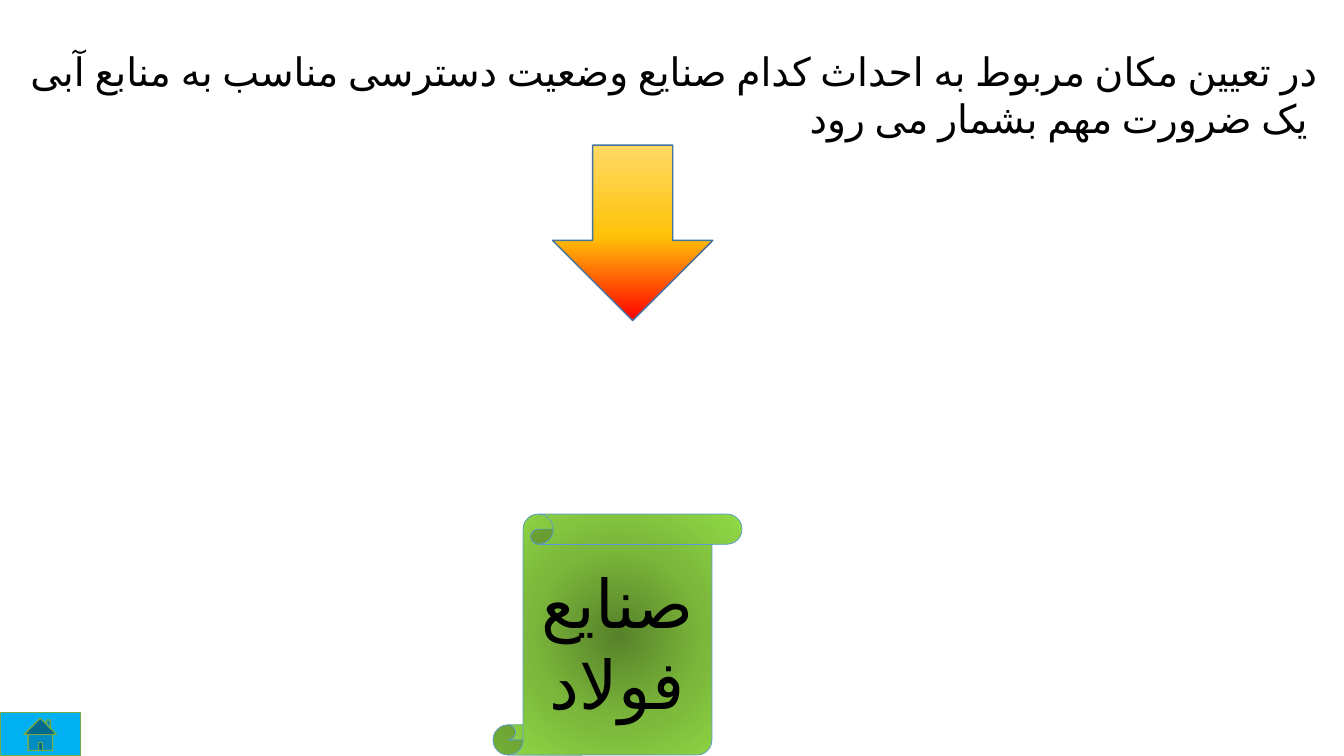
from lxml import etree
from pptx import Presentation
from pptx.dml.color import RGBColor
from pptx.enum import lang, shapes, text
from pptx.oxml import ns
from pptx.util import Inches, Pt

FONT = "Calibri"
SCRIPT_FONT = "+mn-cs"
TITLE = {
    "words": "در تعیین مکان مربوط به احداث کدام صنایع وضعیت دسترسی مناسب به منابع آبی یک ضرورت مهم بشمار می رود ",
    "box": (0.11, 0.42, 13.06, 1.04),
    "size": 28,
    "align": text.PP_ALIGN.RIGHT,
    "frame": {"word_wrap": True, "auto_size": text.MSO_AUTO_SIZE.NONE,
              "vertical_anchor": text.MSO_ANCHOR.TOP},
}
ANSWER = {
    "words": "صنایع فولاد",
    "size": 48,
    "align": text.PP_ALIGN.CENTER,
    "frame": {"word_wrap": True, "vertical_anchor": text.MSO_ANCHOR.MIDDLE},
}
ARROW_STOPS = [(0, "FF0000"), (48, "FFC208"), (100, "FFD966")]
SCROLL_STOPS = [(0, "57812A"), (50, "7BB73B"), (100, "92DA46")]
FIGURES = [
    {"kind": shapes.MSO_SHAPE.DOWN_ARROW, "box": (5.48, 1.44, 1.59, 1.74),
     "stops": ARROW_STOPS, "angle": 270, "line": ("43739E", 1)},
    {"kind": shapes.MSO_SHAPE.VERTICAL_SCROLL, "box": (4.89, 5.1, 2.47, 2.39),
     "stops": SCROLL_STOPS, "line": ("5B9BD5", 0.5), "label": ANSWER},
    {"kind": shapes.MSO_SHAPE.ACTION_BUTTON_HOME, "box": (0, 7.07, 0.8, 0.43),
     "fill": "00B0F0", "line": ("70AD47", 1)},
]


def paint(color, value):
    color.rgb = RGBColor.from_string(value)


def add_child(parent, tag, **attributes):
    values = {name: str(value) for name, value in attributes.items()}
    return etree.SubElement(parent, ns.qn(tag), values)


def solid(shape, value):
    shape.fill.solid()
    paint(shape.fill.fore_color, value)


def gradient(shape, stops, angle=None):
    shape.fill.background()
    properties = shape.element.spPr
    empty_fill = properties.find(ns.qn("a:noFill"))
    fill = etree.Element(ns.qn("a:gradFill"), rotWithShape="1")
    stop_list = add_child(fill, "a:gsLst")
    for position, value in stops:
        stop = add_child(stop_list, "a:gs", pos=position * 1000)
        add_child(stop, "a:srgbClr", val=value)
    if angle is None:
        center = add_child(fill, "a:path", path="circle")
        add_child(center, "a:fillToRect", l=50000, t=50000, r=50000, b=50000)
    else:
        add_child(fill, "a:lin", ang=angle * 60000, scaled=0)
    properties.replace(empty_fill, fill)


def write(shape, label):
    frame = shape.text_frame
    for name, value in label["frame"].items():
        setattr(frame, name, value)
    paragraph = frame.paragraphs[0]
    paragraph.alignment = label["align"]
    run = paragraph.add_run()
    run.text = label["words"]
    formats = {"name": FONT, "size": Pt(label["size"]),
               "language_id": lang.MSO_LANGUAGE_ID.FARSI}
    for name, value in formats.items():
        setattr(run.font, name, value)
    paint(run.font.color, "000000")
    add_child(run.font._element, "a:cs", typeface=SCRIPT_FONT)


def add_figure(slide, figure):
    shape = slide.shapes.add_shape(figure["kind"], *map(Inches, figure["box"]))
    shape.shadow.inherit = False
    if "stops" in figure:
        gradient(shape, figure["stops"], figure.get("angle"))
    else:
        solid(shape, figure["fill"])
    color, width = figure["line"]
    paint(shape.line.color, color)
    shape.line.width = Pt(width)
    if "label" in figure:
        write(shape, figure["label"])


def main():
    presentation = Presentation()
    presentation.slide_width = Inches(13.33)
    presentation.slide_height = Inches(7.5)
    slide = presentation.slides.add_slide(presentation.slide_layouts[5])
    title = slide.shapes.title
    for name, value in zip(("left", "top", "width", "height"), TITLE["box"]):
        setattr(title, name, Inches(value))
    solid(title, "FFFFFF")
    write(title, TITLE)
    for figure in FIGURES:
        add_figure(slide, figure)
    presentation.save("out.pptx")


if __name__ == "__main__":
    main()
